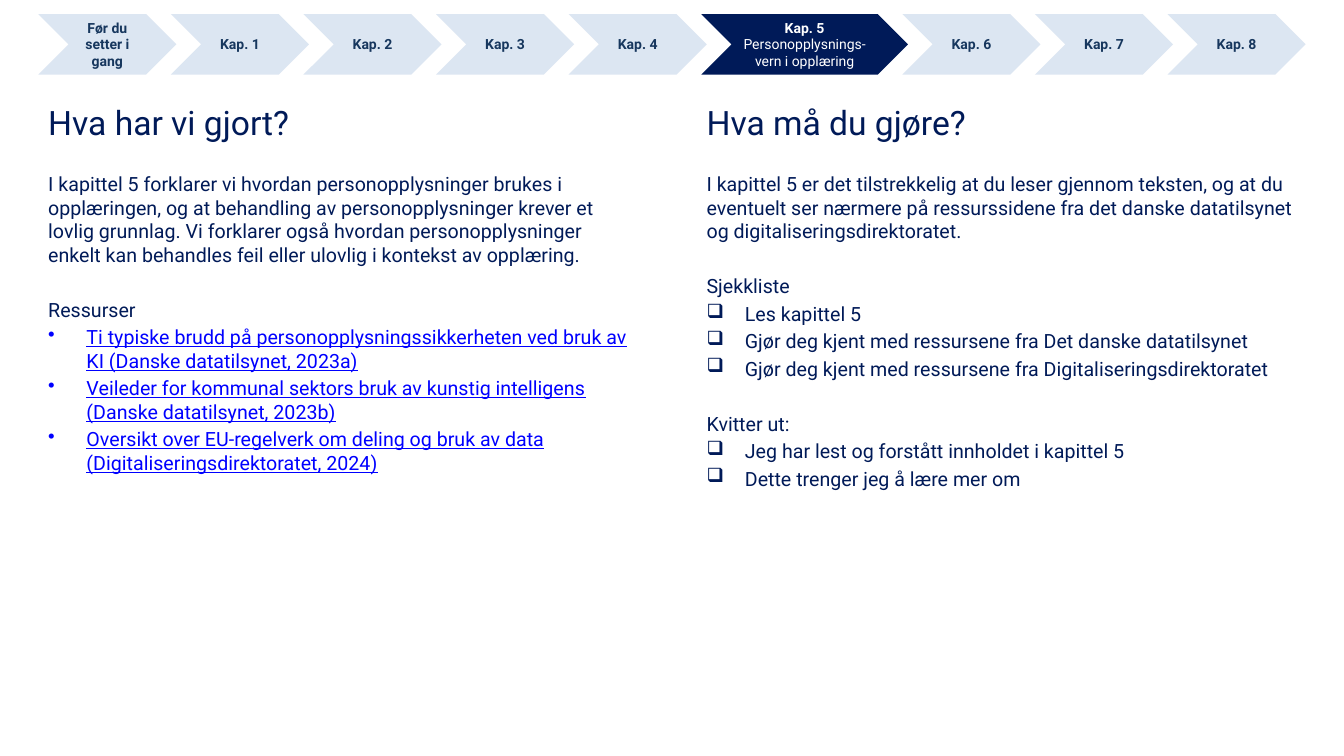
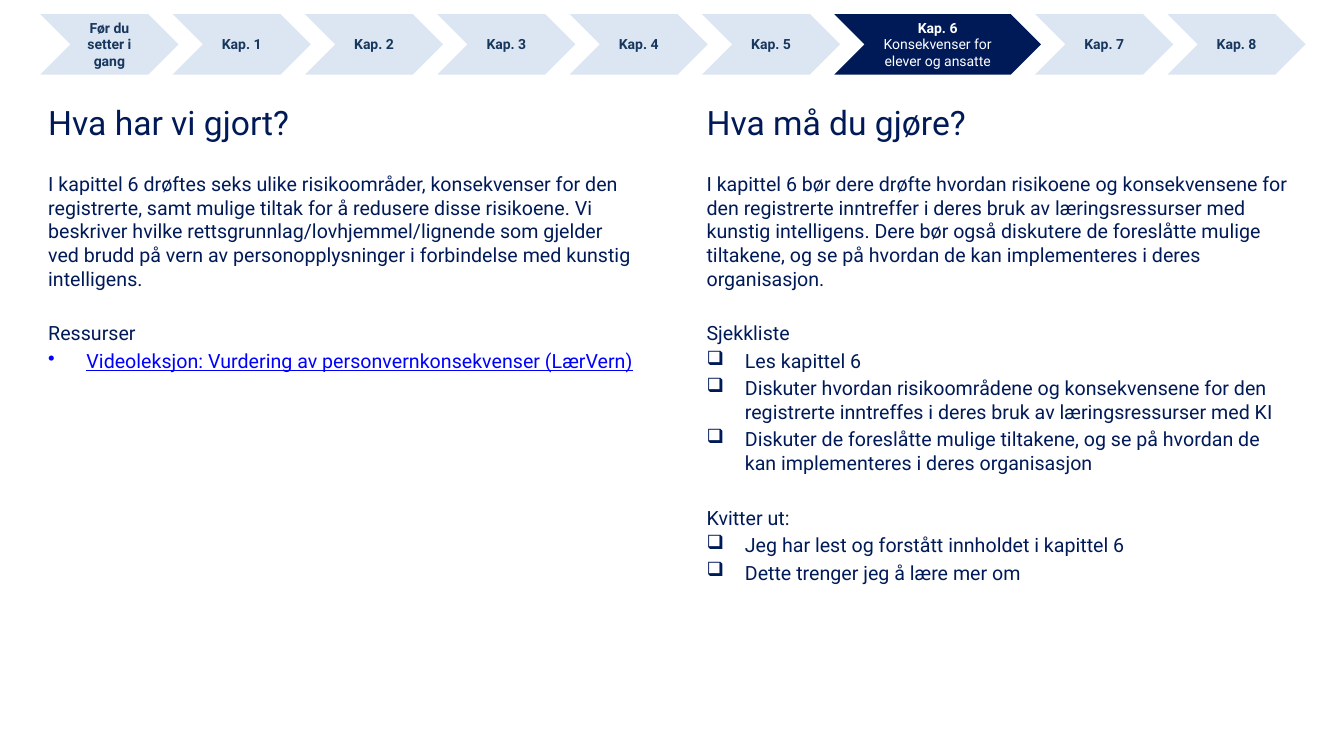
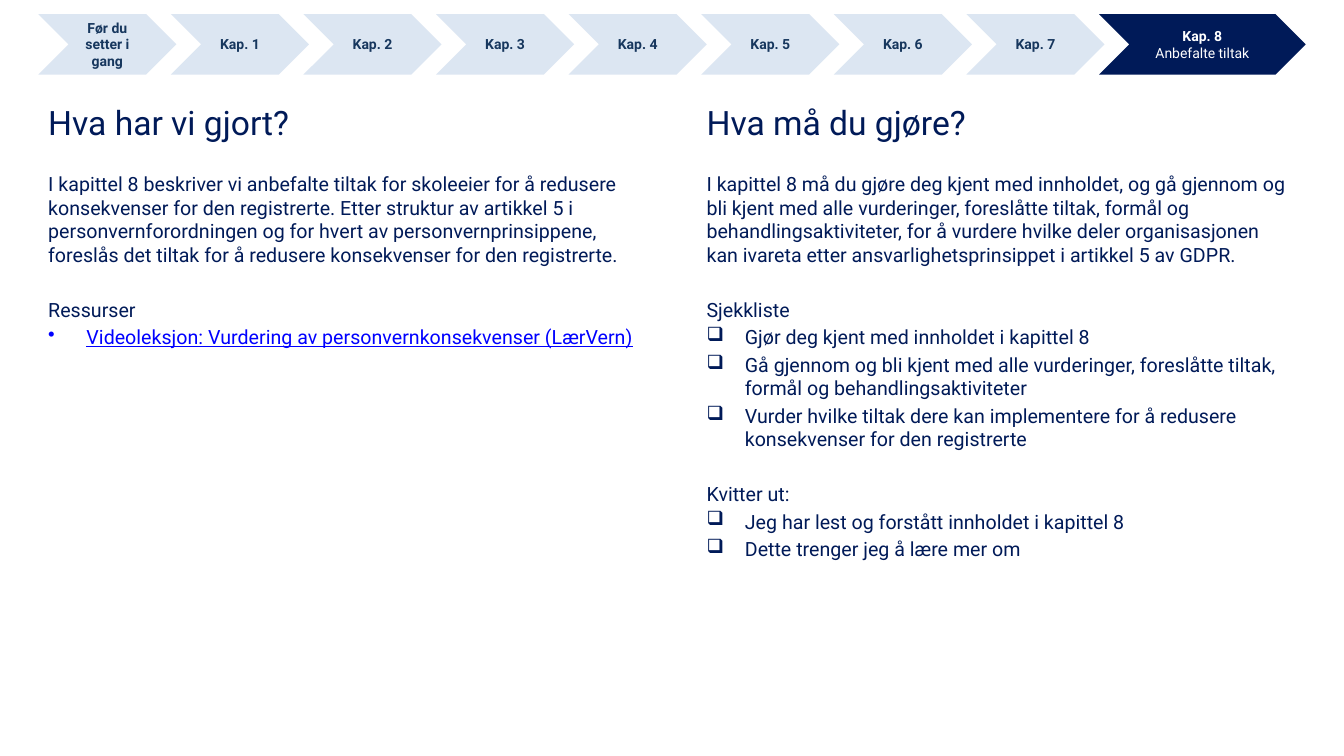
from pptx import Presentation
from pptx.dml.color import RGBColor
from pptx.enum.shapes import MSO_SHAPE
from pptx.enum.text import MSO_ANCHOR, PP_ALIGN
from pptx.oxml.ns import qn
from pptx.util import Inches, Pt
from lxml.etree import SubElement

COLORS = {
    "navy": "001A58",
    "pale": "DCE6F2",
    "step_text": "17375E",
    "white": "FFFFFF",
    "link": "0000FF",
}
FONT = "Roboto"

# Text formats
TITLE = {"size": Pt(24), "color": "navy"}
BODY = {"size": Pt(14), "color": "navy"}
LINK = {**BODY, "color": "link", "underline": True}
STEP = {"size": Pt(10), "color": "step_text", "bold": True}
ACTIVE_STEP = {**STEP, "color": "white"}
ACTIVE_NAME = {**ACTIVE_STEP, "bold": False}

# Paragraph spacing and indent
ITEM_GAP = Pt(2.8)
SECTION_GAP = Pt(22.4)
INDENT = Inches(0.38)

# Progress band
STEPS = ["Før du setter i gang"] + [f"Kap. {number}" for number in range(1, 9)]
BAND_TOP, BAND_HEIGHT, BAND_RIGHT = 0.14, 0.6, 12.95
STEP_WIDTH, ACTIVE_WIDTH = 1.37, 2.05

# Columns: left, width
COLUMNS = [(0.38, 6.04), (6.91, 6.04)]
TITLE_TOP, TITLE_HEIGHT = 0.91, 0.6
BODY_TOP, BODY_HEIGHT = 1.66, 4.92

VIDEO = "Videoleksjon: Vurdering av personvernkonsekvenser (LærVern)"

CHAPTERS = [
    {
        "number": 5,
        "name": "Personopplysnings-vern i opplæring",
        "band_left": 0.38,
        "done": "I kapittel 5 forklarer vi hvordan personopplysninger brukes i opplæringen, "
                "og at behandling av personopplysninger krever et lovlig grunnlag. Vi forklarer "
                "også hvordan personopplysninger enkelt kan behandles feil eller ulovlig i "
                "kontekst av opplæring.",
        "resources": [
            "Ti typiske brudd på personopplysningssikkerheten ved bruk av KI "
            "(Danske datatilsynet, 2023a)",
            "Veileder for kommunal sektors bruk av kunstig intelligens "
            "(Danske datatilsynet, 2023b)",
            "Oversikt over EU-regelverk om deling og bruk av data "
            "(Digitaliseringsdirektoratet, 2024)",
        ],
        "to_do": "I kapittel 5 er det tilstrekkelig at du leser gjennom teksten, og at du "
                 "eventuelt ser nærmere på ressurssidene fra det danske datatilsynet og "
                 "digitaliseringsdirektoratet.",
        "checklist": [
            "Les kapittel 5",
            "Gjør deg kjent med ressursene fra Det danske datatilsynet",
            "Gjør deg kjent med ressursene fra Digitaliseringsdirektoratet",
        ],
    },
    {
        "number": 6,
        "name": "Konsekvenser for elever og ansatte",
        "band_left": 0.4,
        "done": "I kapittel 6 drøftes seks ulike risikoområder, konsekvenser for den "
                "registrerte, samt mulige tiltak for å redusere disse risikoene. Vi beskriver "
                "hvilke rettsgrunnlag/lovhjemmel/lignende som gjelder ved brudd på vern av "
                "personopplysninger i forbindelse med kunstig intelligens.",
        "resources": [VIDEO],
        "to_do": "I kapittel 6 bør dere drøfte hvordan risikoene og konsekvensene for den "
                 "registrerte inntreffer i deres bruk av læringsressurser med kunstig "
                 "intelligens. Dere bør også diskutere de foreslåtte mulige tiltakene, og se "
                 "på hvordan de kan implementeres i deres organisasjon.",
        "checklist": [
            "Les kapittel 6",
            "Diskuter hvordan risikoområdene og konsekvensene for den registrerte inntreffes "
            "i deres bruk av læringsressurser med KI",
            "Diskuter de foreslåtte mulige tiltakene, og se på hvordan de kan implementeres "
            "i deres organisasjon",
        ],
    },
    {
        "number": 8,
        "name": "Anbefalte tiltak",
        "band_left": 0.38,
        "done": "I kapittel 8 beskriver vi anbefalte tiltak for skoleeier for å redusere "
                "konsekvenser for den registrerte. Etter struktur av artikkel 5 i "
                "personvernforordningen og for hvert av personvernprinsippene, foreslås det "
                "tiltak for å redusere konsekvenser for den registrerte.",
        "resources": [VIDEO],
        "to_do": "I kapittel 8 må du gjøre deg kjent med innholdet, og gå gjennom og bli "
                 "kjent med alle vurderinger, foreslåtte tiltak, formål og "
                 "behandlingsaktiviteter, for å vurdere hvilke deler organisasjonen kan "
                 "ivareta etter ansvarlighetsprinsippet i artikkel 5 av GDPR.",
        "checklist": [
            "Gjør deg kjent med innholdet i kapittel 8",
            "Gå gjennom og bli kjent med alle vurderinger, foreslåtte tiltak, formål og "
            "behandlingsaktiviteter",
            "Vurder hvilke tiltak dere kan implementere for å redusere konsekvenser for den "
            "registrerte",
        ],
    },
]


def rgb(name):
    return RGBColor.from_string(COLORS[name])


def write_run(paragraph, text, text_format):
    run = paragraph.add_run()
    run.text = text
    run.font.name = FONT
    for name, value in text_format.items():
        if name == "color":
            run.font.color.rgb = rgb(value)
        else:
            setattr(run.font, name, value)


def next_paragraph(text_frame):
    """Return the empty first paragraph, or a new one."""
    first = text_frame.paragraphs[0]
    return text_frame.add_paragraph() if first.runs else first


def add_bullet(paragraph, character):
    properties = paragraph._p.get_or_add_pPr()
    properties.set("marL", str(INDENT))
    properties.set("indent", str(-INDENT))
    SubElement(properties, qn("a:buChar")).set("char", character)


def add_text_frame(slide, left, top, width, height, anchor):
    box = slide.shapes.add_textbox(Inches(left), Inches(top), Inches(width), Inches(height))
    box.text_frame.word_wrap = True
    box.text_frame.vertical_anchor = anchor
    return box.text_frame


def add_step(slide, left, width, lines, fill):
    """One chevron; lines holds (text, format) pairs."""
    shape = slide.shapes.add_shape(MSO_SHAPE.CHEVRON, Inches(left), Inches(BAND_TOP),
                                   Inches(width), Inches(BAND_HEIGHT))
    shape.shadow.inherit = False
    shape.fill.solid()
    shape.fill.fore_color.rgb = rgb(fill)
    shape.line.fill.background()
    shape.text_frame.word_wrap = True
    shape.text_frame.vertical_anchor = MSO_ANCHOR.MIDDLE
    for text, text_format in lines:
        paragraph = next_paragraph(shape.text_frame)
        paragraph.alignment = PP_ALIGN.CENTER
        write_run(paragraph, text, text_format)


def add_progress_band(slide, left, active, name):
    """Chevrons from left to BAND_RIGHT, overlapping equally."""
    widths = [ACTIVE_WIDTH if index == active else STEP_WIDTH for index in range(len(STEPS))]
    overlap = (sum(widths) - (BAND_RIGHT - left)) / (len(STEPS) - 1)
    for index, (label, width) in enumerate(zip(STEPS, widths)):
        if index == active:
            lines = [(label, ACTIVE_STEP), (name, ACTIVE_NAME)]
            add_step(slide, left, width, lines, "navy")
        else:
            add_step(slide, left, width, [(label, STEP)], "pale")
        left += width - overlap


def add_column(slide, box, title, intro, sections, bullet, item_format):
    """Title, introduction and headed lists in one column."""
    left, width = box
    title_frame = add_text_frame(slide, left, TITLE_TOP, width, TITLE_HEIGHT, MSO_ANCHOR.MIDDLE)
    write_run(title_frame.paragraphs[0], title, TITLE)

    body = add_text_frame(slide, left, BODY_TOP, width, BODY_HEIGHT, MSO_ANCHOR.TOP)
    write_run(body.paragraphs[0], intro, BODY)
    for heading, items in sections:
        paragraph = next_paragraph(body)
        paragraph.space_before = SECTION_GAP
        write_run(paragraph, heading, BODY)
        for item in items:
            paragraph = next_paragraph(body)
            paragraph.space_before = ITEM_GAP
            add_bullet(paragraph, bullet)
            write_run(paragraph, item, item_format)


def add_chapter_slide(presentation, chapter):
    slide = presentation.slides.add_slide(presentation.slide_layouts[6])
    number = chapter["number"]
    add_progress_band(slide, chapter["band_left"], number, chapter["name"])

    # Left: what has been done
    add_column(slide, COLUMNS[0], "Hva har vi gjort?", chapter["done"],
               [("Ressurser", chapter["resources"])], "•", LINK)

    # Right: what the reader must do
    sign_off = [f"Jeg har lest og forstått innholdet i kapittel {number}",
                "Dette trenger jeg å lære mer om"]
    add_column(slide, COLUMNS[1], "Hva må du gjøre?", chapter["to_do"],
               [("Sjekkliste", chapter["checklist"]), ("Kvitter ut:", sign_off)], "❑", BODY)


def main():
    presentation = Presentation()
    presentation.slide_width = Inches(13.33)
    presentation.slide_height = Inches(7.5)
    for chapter in CHAPTERS:
        add_chapter_slide(presentation, chapter)
    presentation.save("out.pptx")


if __name__ == "__main__":
    main()
